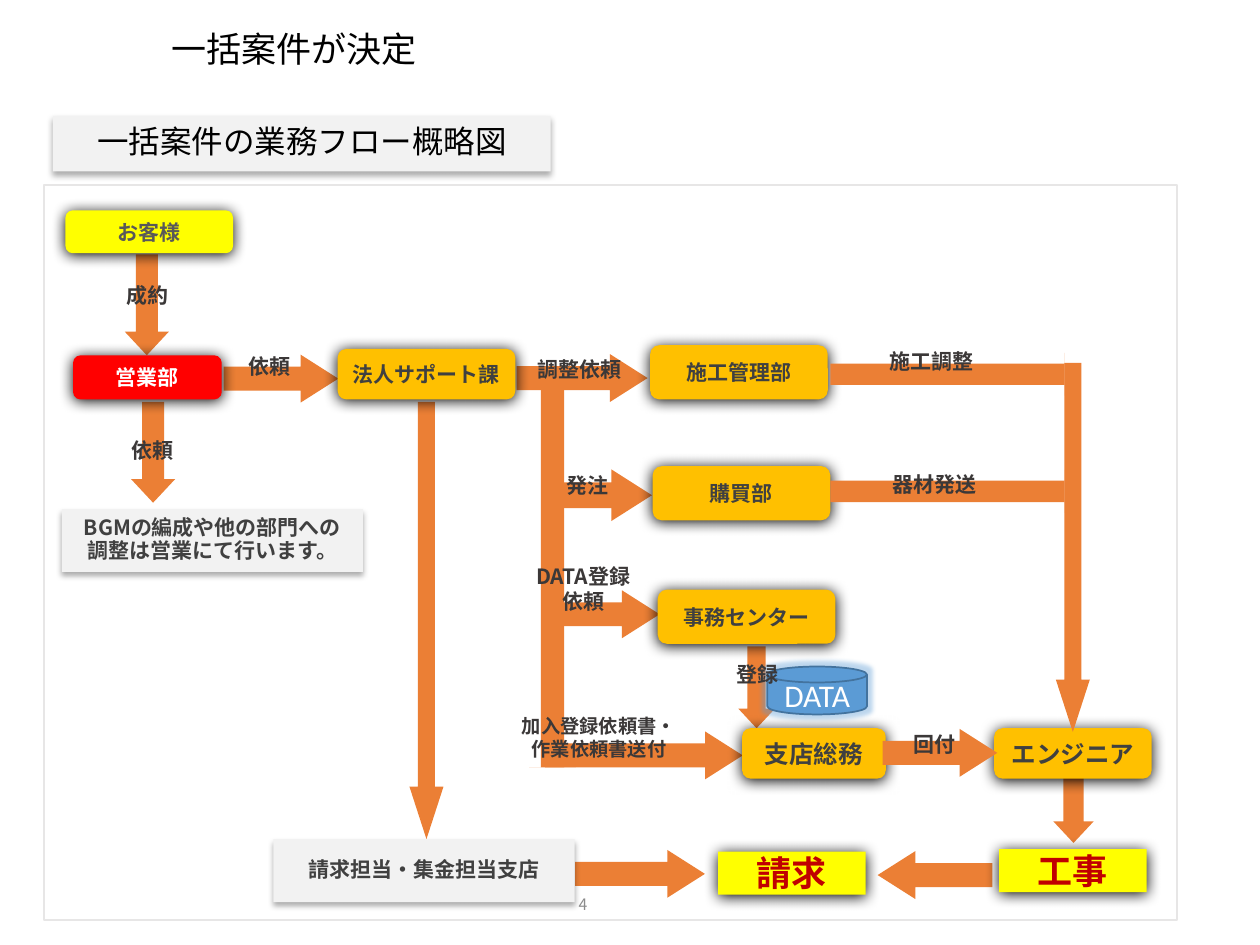
from lxml.etree import SubElement
from pptx import Presentation
from pptx.dml.color import RGBColor
from pptx.enum.shapes import MSO_SHAPE
from pptx.enum.text import MSO_ANCHOR, MSO_AUTO_SIZE, PP_ALIGN
from pptx.oxml import parse_xml
from pptx.oxml.ns import nsdecls, qn
from pptx.util import Inches, Pt

FONT = "Noto Sans CJK JP"
COLORS = {
    "arrow": "EB7F35", "frame": "E7E6E6", "note": "F2F2F2",
    "red": "FF0000", "orange": "FFC000", "yellow": "FFFF00",
    "disk": "5B9BD5", "disk_line": "43739E", "glow": "5B9BD5",
    "white": "FFFFFF", "black": "000000", "dark": "404040",
    "label": "3B3838", "customer": "595959", "goal": "C00000", "page": "8C8C8C",
}
STRONG_SHADOW = (100, 8.5, 1)
SOFT_SHADOW = (32, 3.5, 2.2)


def write(shape, text, size=12, color="dark", bold=True, align=PP_ALIGN.CENTER,
          anchor=MSO_ANCHOR.MIDDLE, spacing=None, font=FONT, tight=False):
    """Put one formatted paragraph in a shape; tight drops the upper and lower margins."""
    frame = shape.text_frame
    frame.word_wrap = True
    frame.vertical_anchor = anchor
    if tight:
        frame.margin_left = frame.margin_right = Inches(0.08)
        frame.margin_top = frame.margin_bottom = 0
        frame.auto_size = MSO_AUTO_SIZE.SHAPE_TO_FIT_TEXT
    paragraph = frame.paragraphs[0]
    paragraph.alignment = align
    if spacing:
        paragraph.line_spacing = spacing
    run = paragraph.add_run()
    run.text = text
    run.font.size = Pt(size)
    run.font.bold = bold
    run.font.color.rgb = RGBColor.from_string(COLORS[color])
    run.font.name = font
    SubElement(run.font._element, qn("a:ea")).set("typeface", font)


def add_block(kind, position, fill=None, line=None, shadow=None):
    """Add a preset shape; shadow is (opacity %, blur pt, distance pt)."""
    shape = slide.shapes.add_shape(kind, *map(Inches, position))
    shape.shadow.inherit = False
    if fill:
        shape.fill.solid()
        shape.fill.fore_color.rgb = RGBColor.from_string(COLORS[fill])
    else:
        shape.fill.background()
    if line:
        shape.line.color.rgb = RGBColor.from_string(COLORS[line])
        shape.line.width = Pt(1)
    else:
        shape.line.fill.background()
    if shadow:
        opacity, blur, distance = shadow
        shape._element.spPr.find(qn("a:effectLst")).append(parse_xml(
            f'<a:outerShdw {nsdecls("a")} blurRad="{Pt(blur)}" dist="{Pt(distance)}" '
            f'dir="5400000" algn="t" rotWithShape="0"><a:srgbClr val="{COLORS["black"]}">'
            f'<a:alpha val="{opacity * 1000}"/></a:srgbClr></a:outerShdw>'))
    return shape


presentation = Presentation()
presentation.slide_width = Inches(10)
presentation.slide_height = Inches(7.5)
slide = presentation.slides.add_slide(presentation.slide_layouts[5])

title = slide.shapes.title
title.left, title.top, title.width, title.height = map(Inches, (1.26, 0.03, 7.83, 0.75))
write(title, "一括案件が決定", size=20, color="black", bold=False,
      align=PP_ALIGN.LEFT, spacing=0.9)

add_block(MSO_SHAPE.RECTANGLE, (0.35, 1.47, 8.99, 5.83), line="frame")
page_number = slide.shapes.add_textbox(*map(Inches, (2.51, 6.98, 2.25, 0.4)))
write(page_number, "4", size=9, color="page", bold=False, align=PP_ALIGN.RIGHT)

# Arrows: left, top, width, height, rotation, head length relative to width
arrows = [
    (0.99, 2.02, 0.35, 0.8, 0, 0.535),
    (1.04, 3.19, 0.35, 0.8, 0, 0.535),
    (5.86, 5.13, 0.29, 0.65, 0, 0.535),
    (8.36, 6.17, 0.32, 0.52, 0, 0.535),
    (2.04, 2.55, 0.38, 0.91, 270, 0.786),
    (4.43, 2.48, 0.38, 1.04, 270, 0.786),
    (4.59, 3.55, 0.41, 0.76, 270, 0.786),
    (4.59, 4.42, 0.38, 0.91, 270, 0.786),
    (4.92, 5.21, 0.38, 1.57, 270, 0.786),
    (4.89, 6.42, 0.38, 1.03, 270, 0.786),
    (7.23, 6.49, 0.38, 0.91, 90, 0.786),
    (4.2, 3.03, 0.37, 3.06, 0, 0),
    (3.25, 3.19, 0.27, 3.47, 0, 1.542),
]
arrows_over_boxes = [
    (7.27, 5.52, 0.38, 0.91, 270, 0.786),
    (8.38, 2.88, 0.27, 2.93, 0, 1.542),
    (7.35, 2.04, 0.34, 1.86, 270, 0),
    (7.35, 2.97, 0.34, 1.86, 270, 0),
]
# Departments: text, position, fill, text colour, size
departments = [
    ("お客様", (0.52, 1.67, 1.33, 0.34), "yellow", "customer", 12),
    ("営業部", (0.58, 2.82, 1.18, 0.35), "red", "white", 12),
    ("法人サポート課", (2.68, 2.77, 1.41, 0.4), "orange", "dark", 12),
    ("施工管理部", (5.16, 2.74, 1.41, 0.43), "orange", "dark", 12),
    ("購買部", (5.18, 3.7, 1.41, 0.43), "orange", "dark", 12),
    ("事務センター", (5.22, 4.68, 1.41, 0.43), "orange", "dark", 12),
    ("支店総務", (5.89, 5.78, 1.14, 0.4), "orange", "dark", 14),
    ("エンジニア", (7.89, 5.78, 1.25, 0.4), "orange", "dark", 14),
]
notes = [
    ("一括案件の業務フロー概略図", (0.42, 0.92, 3.95, 0.44), "black", 18, False),
    ("BGMの編成や他の部門への調整は営業にて行います。", (0.49, 4.04, 2.39, 0.5), "dark", 12, True),
    ("請求担当・集金担当支店", (2.17, 6.66, 2.39, 0.5), "dark", 12, True),
]
goals = [("工事", (7.93, 6.74, 1.17, 0.34)), ("請求", (5.7, 6.76, 1.17, 0.34))]
labels = [
    ("成約", (0.73, 2.24, 0.88, 0.2), 12),
    ("依頼", (1.7, 2.81, 0.88, 0.2), 12),
    ("依頼", (0.77, 3.47, 0.88, 0.2), 12),
    ("調整依頼", (4.1, 2.83, 1, 0.2), 12),
    ("発注", (4.16, 3.75, 1, 0.2), 12),
    ("DATA登録依頼", (4.1, 4.47, 1.06, 0.4), 12),
    ("加入登録依頼書・作業依頼書送付", (4, 5.67, 1.51, 0.37), 11),
    ("登録", (5.51, 5.25, 1, 0.2), 12),
    ("回付", (6.92, 5.81, 1, 0.2), 12),
    ("施工調整", (6.89, 2.77, 1, 0.2), 12),
    ("器材発送", (6.92, 3.74, 1, 0.2), 12),
]

for layer in ("under", "over"):
    for *position, rotation, head in arrows if layer == "under" else arrows_over_boxes:
        arrow = add_block(MSO_SHAPE.DOWN_ARROW, position, fill="arrow")
        arrow.adjustments[0] = 0.5
        arrow.adjustments[1] = head
        arrow.rotation = rotation
    if layer == "under":
        for text, position, fill, color, size in departments:
            department = add_block(MSO_SHAPE.ROUNDED_RECTANGLE, position, fill,
                                   shadow=STRONG_SHADOW)
            write(department, text, size=size, color=color)

for text, position, color, size, bold in notes:
    note = add_block(MSO_SHAPE.RECTANGLE, position, "note", shadow=SOFT_SHADOW)
    write(note, text, size=size, color=color, bold=bold, spacing=0.9)

for text, position in goals:
    goal = add_block(MSO_SHAPE.RECTANGLE, position, "yellow", shadow=STRONG_SHADOW)
    write(goal, text, size=20, color="goal", anchor=MSO_ANCHOR.TOP, tight=True)

database = add_block(MSO_SHAPE.FLOWCHART_MAGNETIC_DISK, (6.09, 5.29, 0.79, 0.38),
                     "disk", line="disk_line")
database._element.spPr.find(qn("a:effectLst")).append(parse_xml(
    f'<a:glow {nsdecls("a")} rad="{Pt(5)}"><a:srgbClr val="{COLORS["glow"]}">'
    '<a:alpha val="40000"/></a:srgbClr></a:glow>'))
write(database, "DATA", size=18, color="white", bold=False, font="Calibri")

for text, position, size in labels:
    label = slide.shapes.add_textbox(*map(Inches, position))
    write(label, text, size=size, color="label", anchor=MSO_ANCHOR.TOP, tight=True)

presentation.save("out.pptx")
